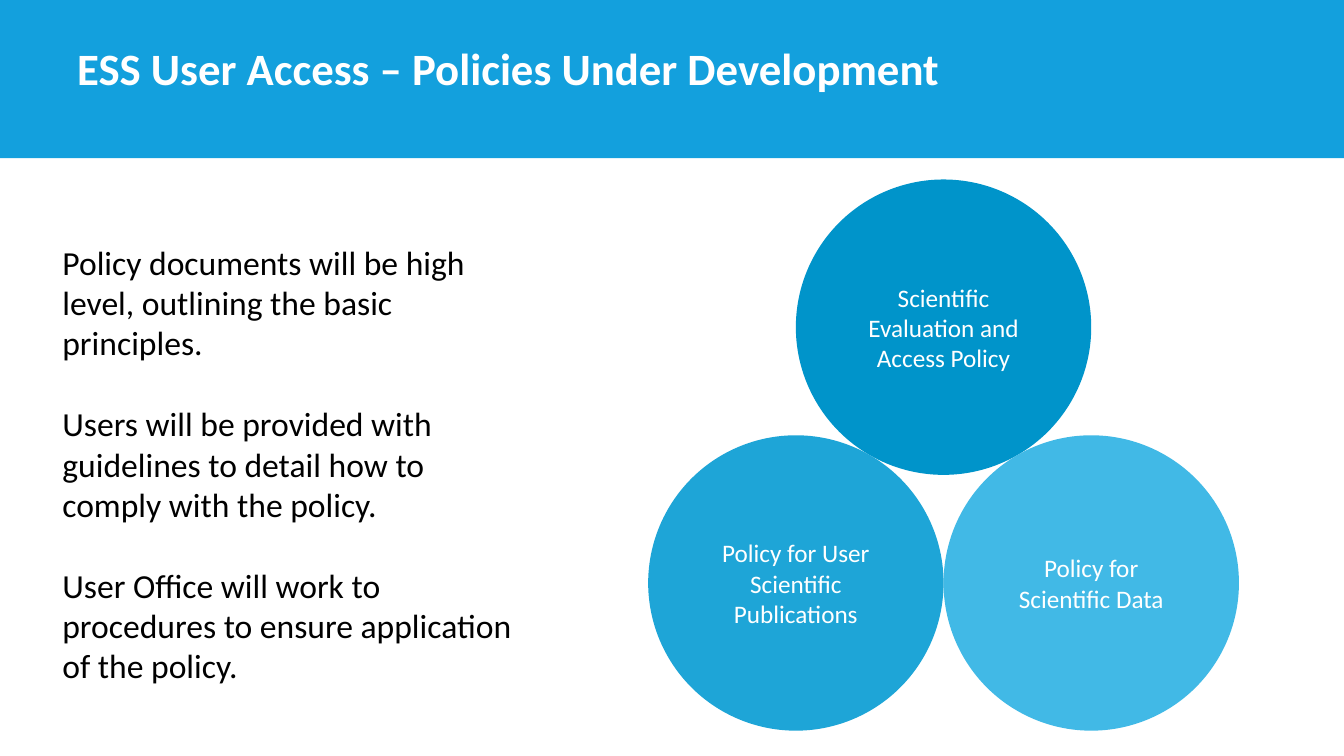
from math import sqrt

from pptx import Presentation
from pptx.dml.color import RGBColor
from pptx.enum.shapes import MSO_SHAPE
from pptx.enum.text import MSO_ANCHOR, PP_ALIGN
from pptx.util import Pt

RECT, OVAL = MSO_SHAPE.RECTANGLE, MSO_SHAPE.OVAL
TOP, MIDDLE, BOTTOM = MSO_ANCHOR.TOP, MSO_ANCHOR.MIDDLE, MSO_ANCHOR.BOTTOM
LEFT, CENTER = PP_ALIGN.LEFT, PP_ALIGN.CENTER
FONT = "Calibri"
COLORS = {
    "band": "13A0DD",
    "access": "0094CA",
    "papers": "1EA5D7",
    "data": "41B9E6",
    "white": "FFFFFF",
    "black": "000000",
}
POLICY_NOTES = [
    "Policy documents will be high level, outlining the basic principles.",
    "Users will be provided with guidelines to detail how to comply with the policy.",
    "User Office will work to procedures to ensure application of the policy.",
]


def color(name):
    return RGBColor.from_string(COLORS[name])


def write(shape, *texts, size, ink="white", bold=False, align=LEFT,
          anchor=TOP, gap=0, inset=7.2):
    frame = shape.text_frame
    frame.word_wrap = True
    frame.vertical_anchor = anchor
    frame.margin_left = frame.margin_right = Pt(inset)
    for index, text in enumerate(texts):
        para = frame.add_paragraph() if index else frame.paragraphs[0]
        para.alignment = align
        if index:
            para.space_before = Pt(gap)
        run = para.add_run()
        run.text = text
        font = run.font
        font.name, font.size, font.bold = FONT, Pt(size), bold
        font.color.rgb = color(ink)


def add_box(slide, left, top, width, height):
    return slide.shapes.add_textbox(Pt(left), Pt(top), Pt(width), Pt(height))


def add_form(slide, kind, left, top, width, height, fill):
    shape = slide.shapes.add_shape(kind, Pt(left), Pt(top), Pt(width), Pt(height))
    shape.shadow.inherit = False
    shape.fill.solid()
    shape.fill.fore_color.rgb = color(fill)
    shape.line.fill.background()
    return shape


def add_circles(slide, left, top, size):
    low = top + size * sqrt(3) / 2
    circles = [
        (left + size / 2, top, "access", "Scientific Evaluation and Access Policy"),
        (left, low, "papers", "Policy for User Scientific Publications"),
        (left + size, low, "data", "Policy for Scientific Data"),
    ]
    for x, y, fill, text in circles:
        circle = add_form(slide, OVAL, x, y, size, size, fill)
        write(circle, text, size=18, align=CENTER, anchor=MIDDLE, inset=10)


def main():
    deck = Presentation()
    deck.slide_width, deck.slide_height = Pt(960), Pt(540)
    slide = deck.slides.add_slide(deck.slide_layouts[6])
    add_form(slide, RECT, 0, 0, 960, 113, "band")
    title = add_box(slide, 48, 27.4, 755, 44)
    write(title, "ESS User Access – Policies Under Development",
          size=32, bold=True, anchor=BOTTOM)
    add_circles(slide, 463, 128.2, 211)
    notes = add_box(slide, 37.5, 169, 345.6, 356)
    write(notes, *POLICY_NOTES, size=24, ink="black", gap=29)
    deck.save("out.pptx")


if __name__ == "__main__":
    main()
